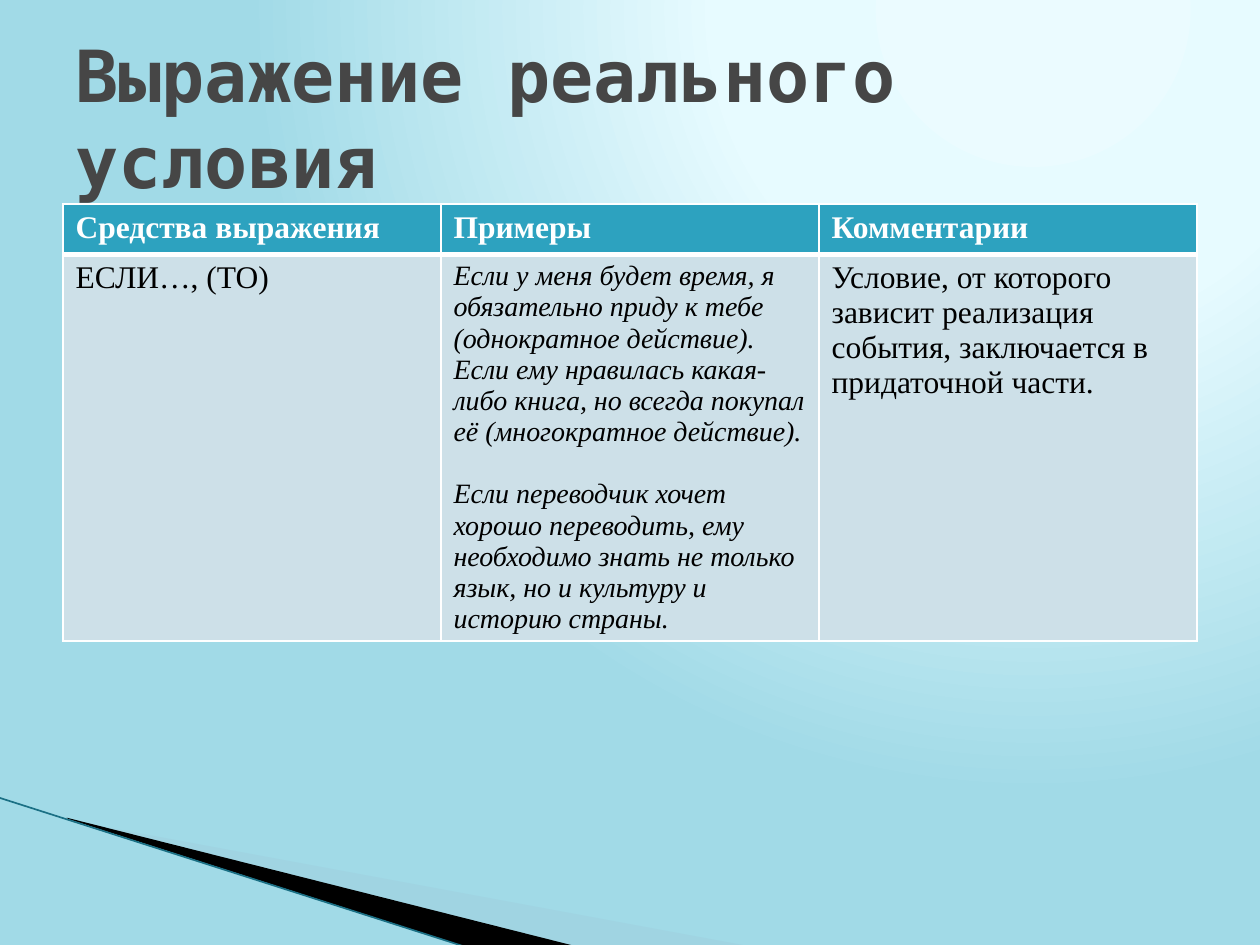
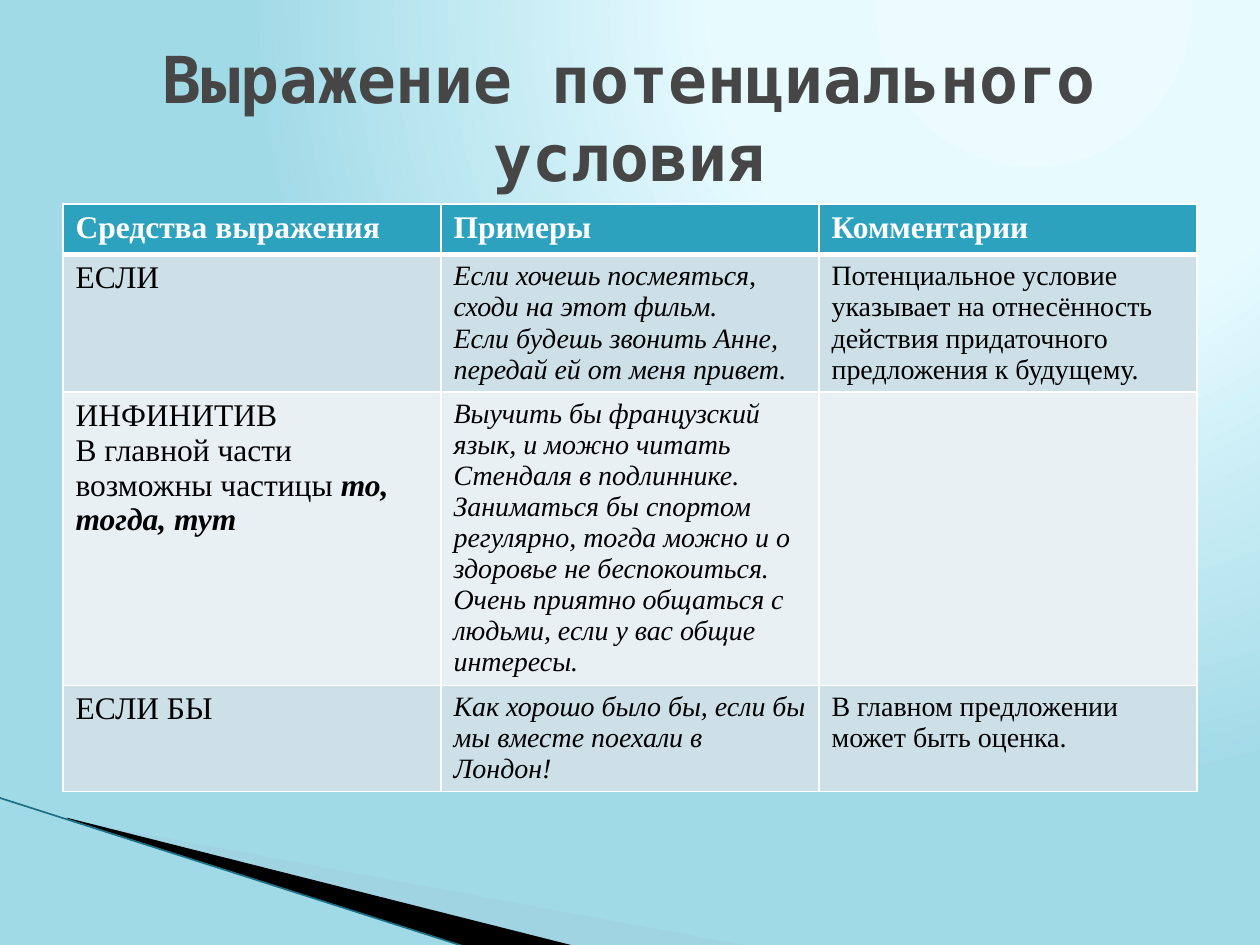
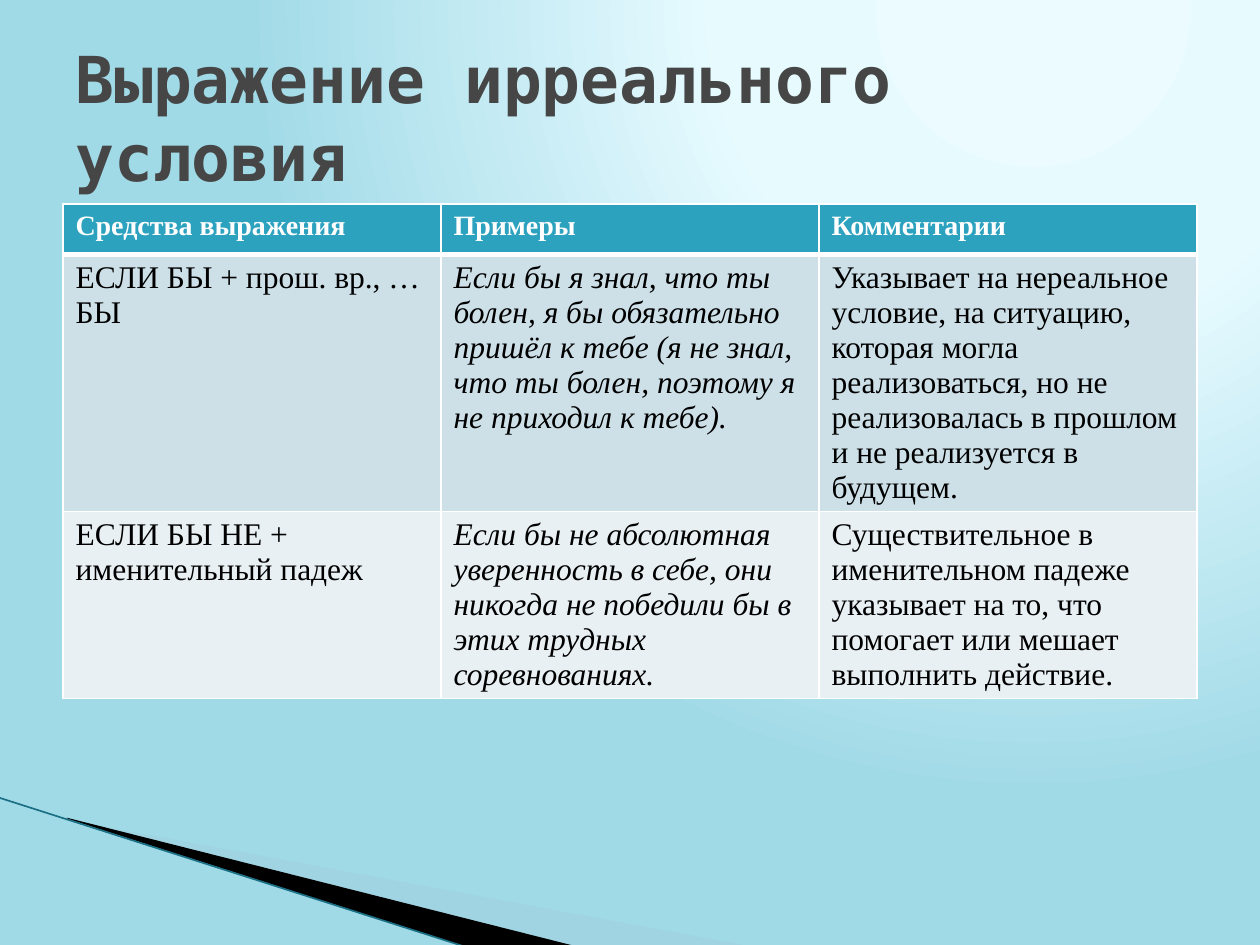
from lxml import etree
from pptx import Presentation
from pptx import util as u
from pptx.dml.color import RGBColor
from pptx.enum import shapes, text
from pptx.oxml import parse_xml
from pptx.oxml.ns import nsdecls, qn

COLORS = {
    "title": "464646",
    "header": "2DA2BF",
    "band_dark": "CDE0E8",
    "band_light": "E8F0F4",
    "white": "FFFFFF",
    "black": "000000",
    "wedge": "A0CBDC",
    "line": "1B7085",
}
GRADIENT = [(0, "EBFBFF"), (40, "E7FBFF"), (100, "A1DAE7")]
TITLE_FONT = "DejaVu Sans Mono"
TABLE_FONT = "Times New Roman"
HEADERS = ["Средства выражения", "Примеры", "Комментарии"]
HEADER_HEIGHT = 0.4
COLUMN_WIDTH = 3
LEFT, TABLE_TOP = 0.5, 1.62
PALE_WEDGE = [(0.55, 6.51), (5.95, 7.51), (4.56, 7.51), (0.55, 6.5)]
BLACK_WEDGE = [(0.53, 6.49), (4.57, 7.51), (3.72, 7.52), (0.54, 6.5)]

SLIDES = [
    {
        "title": "Выражение реального условия",
        "title_size": 41,
        "sizes": (18, 16, 18),
        "paragraph_gap": 18,
        "rows": [
            (3.06, [
                ["ЕСЛИ…, (ТО)"],
                ["Если у меня будет время, я обязательно приду к тебе (однократное действие). "
                 "Если ему нравилась какая-либо книга, но всегда покупал её (многократное действие).",
                 "Если переводчик хочет хорошо переводить, ему необходимо знать не только язык, "
                 "но и культуру и историю страны."],
                ["Условие, от которого зависит реализация события, заключается в придаточной части."],
            ]),
        ],
    },
    {
        "title": "Выражение потенциального условия",
        "title_size": 36.9,
        "title_align": text.PP_ALIGN.CENTER,
        "sizes": (18, 16, 16),
        "rows": [
            (1.09, [
                ["ЕСЛИ"],
                ["Если хочешь посмеяться, сходи на этот фильм.",
                 "Если будешь звонить Анне, передай ей от меня привет."],
                ["Потенциальное условие указывает на отнесённость действия придаточного "
                 "предложения к будущему."],
            ]),
            (2.33, [
                ["ИНФИНИТИВ",
                 ("В главной части возможны частицы ", "то, тогда, тут")],
                ["Выучить бы французский язык, и можно читать Стендаля в подлиннике. "
                 "Заниматься бы спортом регулярно, тогда можно и о здоровье не беспокоиться. "
                 "Очень приятно общаться с людьми, если у вас общие интересы."],
                [],
            ]),
            (0.84, [
                ["ЕСЛИ БЫ"],
                ["Как хорошо было бы, если бы мы вместе поехали в Лондон!"],
                ["В главном предложении может быть оценка."],
            ]),
        ],
    },
    {
        "title": "Выражение ирреального условия",
        "title_size": 36.9,
        "header_size": 16,
        "sizes": (18, 18, 18),
        "rows": [
            (2.04, [
                ["ЕСЛИ БЫ + прош. вр., … БЫ"],
                ["Если бы я знал, что ты болен, я бы обязательно пришёл к тебе "
                 "(я не знал, что ты болен, поэтому я не приходил к тебе)."],
                ["Указывает на нереальное условие, на ситуацию, которая могла реализоваться, "
                 "но не реализовалась в прошлом и не реализуется в будущем."],
            ]),
            (1.48, [
                ["ЕСЛИ БЫ НЕ + именительный падеж"],
                ["Если бы не абсолютная уверенность в себе, они никогда не победили бы "
                 "в этих трудных соревнованиях."],
                ["Существительное в именительном падеже указывает на то, что помогает "
                 "или мешает выполнить действие."],
            ]),
        ],
    },
]


def rgb(name):
    return RGBColor.from_string(COLORS[name])


def write(frame, paragraphs, font=TABLE_FONT, size=18, color="black", bold=False,
          italic=False, align=None, gap=0):
    for index, content in enumerate(paragraphs):
        paragraph = frame.paragraphs[0] if index == 0 else frame.add_paragraph()
        paragraph.alignment = align
        if index and gap:
            paragraph.space_before = u.Pt(gap)
        parts = (content,) if isinstance(content, str) else content
        for position, part in enumerate(parts):
            emphasized = position > 0
            run = paragraph.add_run()
            run.text = part
            run.font.name = font
            run.font.size = u.Pt(size)
            run.font.bold = bold or emphasized
            run.font.italic = italic or emphasized
            run.font.color.rgb = rgb(color)


def set_background(slide):
    stops = "".join(f'<a:gs pos="{position * 1000}"><a:srgbClr val="{color}"/></a:gs>'
                    for position, color in GRADIENT)
    background = parse_xml(
        f'<p:bg {nsdecls("p", "a")}><p:bgPr><a:gradFill rotWithShape="1">'
        f'<a:gsLst>{stops}</a:gsLst><a:path path="circle">'
        '<a:fillToRect l="65000" b="98000"/></a:path></a:gradFill>'
        '<a:effectLst/></p:bgPr></p:bg>')
    slide.element.cSld.insert(0, background)


def add_wedge(slide, points, color, opacity=None):
    corners = [(u.Inches(x), u.Inches(y)) for x, y in points]
    builder = slide.shapes.build_freeform(*corners[0], scale=1.0)
    builder.add_line_segments(corners[1:], close=True)
    shape = builder.convert_to_shape()
    shape.shadow.inherit = False
    shape.fill.solid()
    shape.fill.fore_color.rgb = rgb(color)
    shape.line.fill.background()
    if opacity:
        fill_color = shape.element.spPr.find(qn("a:solidFill"))[0]
        etree.SubElement(fill_color, qn("a:alpha"), val=str(opacity * 1000))


def add_corner_decoration(slide):
    add_wedge(slide, PALE_WEDGE, "wedge", opacity=40)
    add_wedge(slide, BLACK_WEDGE, "black")
    line = slide.shapes.add_connector(
        shapes.MSO_CONNECTOR.STRAIGHT,
        u.Inches(-0.01), u.Inches(6.33), u.Inches(3.71), u.Inches(7.52))
    line.line.color.rgb = rgb("line")
    line.line.width = u.Pt(0.95)
    etree.SubElement(line.element.spPr, qn("a:effectLst"))


def format_cell(cell, fill, top=1, bottom=1):
    properties = cell._tc.get_or_add_tcPr()
    for side, width in (("L", 1), ("R", 1), ("T", top), ("B", bottom)):
        properties.append(parse_xml(
            f'<a:ln{side} {nsdecls("a")} w="{u.Pt(width)}"><a:solidFill>'
            f'<a:srgbClr val="{COLORS["white"]}"/></a:solidFill></a:ln{side}>'))
    cell.fill.solid()
    cell.fill.fore_color.rgb = rgb(fill)


def add_table(slide, content):
    heights = [HEADER_HEIGHT] + [height for height, _ in content["rows"]]
    table = slide.shapes.add_table(
        len(heights), len(HEADERS), u.Inches(LEFT), u.Inches(TABLE_TOP),
        u.Inches(COLUMN_WIDTH * len(HEADERS)), u.Inches(sum(heights))).table
    for column in table.columns:
        column.width = u.Inches(COLUMN_WIDTH)
    for row, height in zip(table.rows, heights):
        row.height = u.Inches(height)

    for column, header in enumerate(HEADERS):
        cell = table.cell(0, column)
        format_cell(cell, "header", bottom=3)
        write(cell.text_frame, [header], size=content.get("header_size", 18),
              color="white", bold=True)
    for row, (_, cells) in enumerate(content["rows"], start=1):
        for column, paragraphs in enumerate(cells):
            cell = table.cell(row, column)
            format_cell(cell, "band_dark" if row % 2 else "band_light",
                        top=3 if row == 1 else 1)
            write(cell.text_frame, paragraphs, size=content["sizes"][column],
                  italic=column == 1, gap=content.get("paragraph_gap", 0))


def add_title(slide, content):
    frame = slide.shapes.add_textbox(
        u.Inches(LEFT), u.Inches(0.3), u.Inches(9), u.Inches(1.25)).text_frame
    frame.word_wrap = True
    frame.vertical_anchor = text.MSO_ANCHOR.MIDDLE
    write(frame, [content["title"]], font=TITLE_FONT, size=content["title_size"],
          color="title", bold=True, align=content.get("title_align"))


def main():
    presentation = Presentation()
    presentation.slide_width = u.Inches(10)
    presentation.slide_height = u.Inches(7.5)
    for content in SLIDES:
        slide = presentation.slides.add_slide(presentation.slide_layouts[6])
        set_background(slide)
        add_corner_decoration(slide)
        add_table(slide, content)
        add_title(slide, content)
    presentation.save("out.pptx")


if __name__ == "__main__":
    main()
